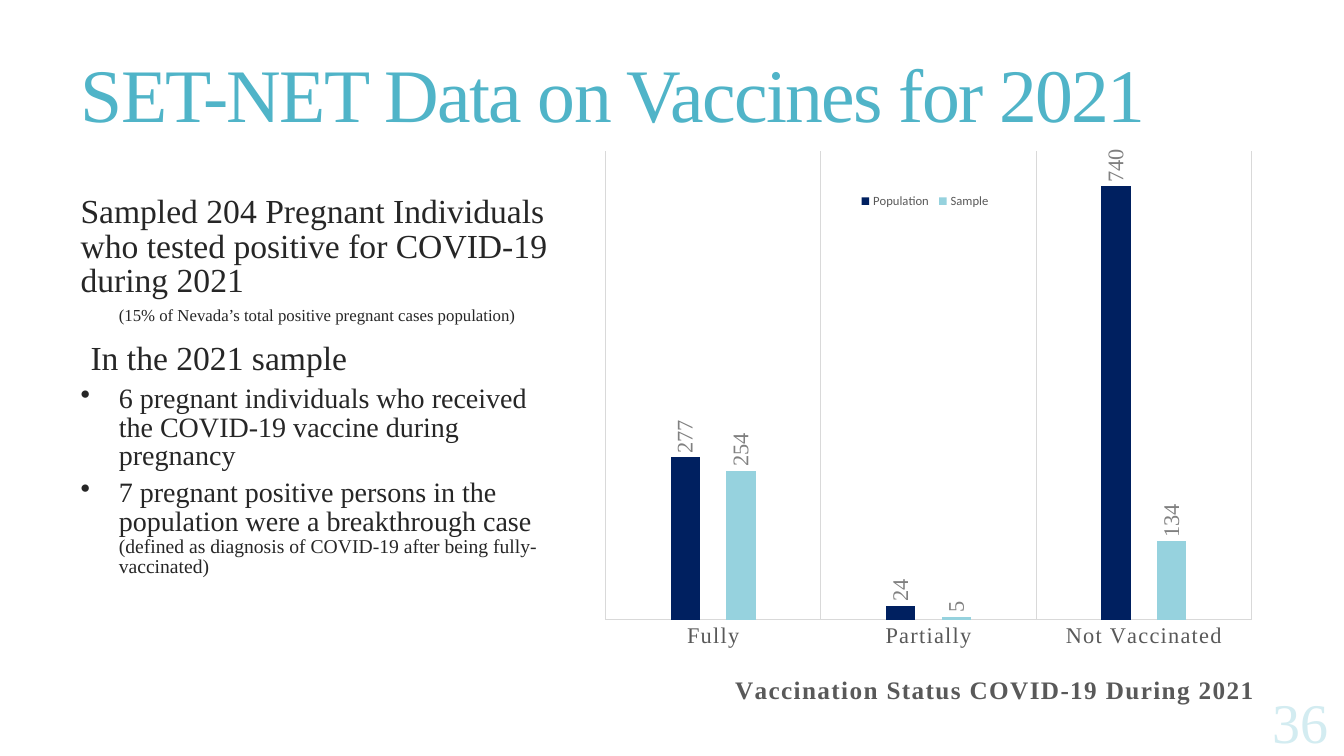
import pptx
import pptx.util
import pptx.dml.color
import pptx.chart.data
import pptx.enum.chart
import pptx.enum.text
import pptx.oxml
import pptx.oxml.ns

SERIF = "Times New Roman"
Pt = pptx.util.Pt
qn = pptx.oxml.ns.qn


def px(n):
    return pptx.util.Emu(n * 9144)


def color(hue):
    return pptx.dml.color.RGBColor.from_string(hue)


def style(font, size, hue, name=SERIF, bold=False):
    font.size = Pt(size)
    font.name = name
    font.bold = bold
    font.color.rgb = color(hue)


def put_title(slide, box):
    title = slide.shapes.title
    title.left, title.top, title.width, title.height = map(px, box)
    frame = title.text_frame
    frame.text = "SET-NET Data on Vaccines for 2021"
    frame.word_wrap = True
    frame.vertical_anchor = pptx.enum.text.MSO_ANCHOR.MIDDLE
    para = frame.paragraphs[0]
    para.alignment = pptx.enum.text.PP_ALIGN.LEFT
    para.line_spacing = 0.85
    style(para.font, 54, "50B4C8")
    para.runs[0].font._element.set("spc", "-120")


def put_body(slide, box):
    frame = slide.shapes.add_textbox(*map(px, box)).text_frame
    frame.word_wrap = True
    rows = [
        (0, 0, "", 0, [("Sampled 204 Pregnant Individuals who tested positive for COVID-19 during 2021", 24)]),
        (38, 0, "", 6, [("(15% of Nevada’s total positive pregnant cases population)", 12)]),
        (10, 0, "", 13, [("In the 2021 sample", 24)]),
        (38, -38, "•", 6, [("6 pregnant individuals who received the COVID-19 vaccine during pregnancy", 20)]),
        (38, -38, "•", 6, [("7 pregnant positive persons in the population were a breakthrough case ", 20),
                           ("(defined as diagnosis of COVID-19 after being fully-vaccinated)", 14)]),
    ]
    for i, (left, hang, mark, gap, parts) in enumerate(rows):
        para = frame.add_paragraph() if i else frame.paragraphs[0]
        props = para._p.get_or_add_pPr()
        props.set("marL", str(px(left)))
        props.set("indent", str(px(hang)))
        if mark:
            bullet = pptx.oxml.parse_xml(
                f'<a:buChar {pptx.oxml.ns.nsdecls("a")} char="{mark}"/>')
            props.append(bullet)
        para.line_spacing = 0.85
        para.space_before = Pt(gap)
        style(para.font, parts[0][1], "262626")
        for text, size in parts:
            run = para.add_run()
            run.text = text
            if size != parts[0][1]:
                run.font.size = Pt(size)


def place(parent, index, **spots):
    for old in parent.findall(qn("c:layout")):
        parent.remove(old)
    modes = "".join(f'<c:{k}Mode val="edge"/>' for k in "xy")
    inner = '<c:layoutTarget val="inner"/>' if index == 0 else ""
    sizes = "".join(f'<c:{k} val="{v}"/>' for k, v in spots.items())
    parent.insert(index, pptx.oxml.parse_xml(
        f'<c:layout {pptx.oxml.ns.nsdecls("c")}><c:manualLayout>'
        f'{inner}{modes}{sizes}</c:manualLayout></c:layout>'))


def put_chart(slide, box):
    enum = pptx.enum.chart
    data = pptx.chart.data.CategoryChartData()
    data.categories = ["Fully", "Partially", "Not Vaccinated"]
    data.add_series("Population", [277, 24, 740])
    data.add_series("Sample", [254, 5, 134])
    chart = slide.shapes.add_chart(
        enum.XL_CHART_TYPE.COLUMN_CLUSTERED, *map(px, box), data).chart
    style(chart.font, 10, "000000", "Calibri")

    plot = chart.plots[0]
    plot.gap_width = 444
    plot.overlap = -90
    plot.vary_by_categories = False
    for series, hue in zip(plot.series, ["002060", "96D2DE"]):
        series.format.fill.solid()
        series.format.fill.fore_color.rgb = color(hue)
        labels = series.data_labels
        labels.show_value = True
        labels.position = enum.XL_LABEL_POSITION.OUTSIDE_END
        style(labels.font, 16, "808080")

    axis = chart.category_axis
    axis.major_tick_mark = enum.XL_TICK_MARK.NONE
    axis.has_major_gridlines = True
    for line in (axis.format.line, axis.major_gridlines.format.line):
        line.color.rgb = color("D9D9D9")
        line.width = Pt(0.75)
    style(axis.tick_labels.font, 16, "595959")
    value = chart.value_axis
    value.minimum_scale, value.maximum_scale = 0, 800
    value.has_major_gridlines = False
    value.visible = False

    chart.has_title = True
    para = chart.chart_title.text_frame.paragraphs[0]
    para.text = "Vaccination Status COVID-19 During 2021"
    style(para.font, 18, "595959", bold=True)
    chart.has_legend = True
    chart.legend.position = enum.XL_LEGEND_POSITION.TOP
    chart.legend.include_in_layout = False
    style(chart.legend.font, 9, "595959", "Calibri")

    root = chart.element
    for body in root.xpath(".//c:dLbls/c:txPr/a:bodyPr"):
        body.set("rot", "-5400000")
        body.set("vert", "horz")
    for props in root.xpath(".//c:catAx//a:defRPr | .//c:title//a:defRPr"):
        props.set("spc", "100")
    place(root.xpath(".//c:plotArea")[0], 0, x=0.04, y=0.05, w=0.93, h=0.75)
    place(root.xpath("./c:chart/c:title")[0], 1, x=0.22, y=0.88)
    place(root.xpath(".//c:legend")[0], 1, x=0.4, y=0.11, w=0.2, h=0.04)


def put_page(slide, box):
    frame = slide.shapes.add_textbox(*map(px, box)).text_frame
    frame.margin_left = frame.margin_right = 0
    frame.margin_top = frame.margin_bottom = 0
    frame.word_wrap = True
    frame.vertical_anchor = pptx.enum.text.MSO_ANCHOR.MIDDLE
    para = frame.paragraphs[0]
    para.text = "36"
    para.alignment = pptx.enum.text.PP_ALIGN.RIGHT
    style(para.font, 40, "D3ECF1")


def main():
    deck = pptx.Presentation()
    deck.slide_width, deck.slide_height = px(1333), px(750)
    slide = deck.slides.add_slide(deck.slide_layouts[5])
    put_title(slide, (70, 26, 1192, 145))
    put_body(slide, (70, 190, 489, 478))
    put_chart(slide, (573, 119, 689, 620))
    put_page(slide, (1218, 684, 100, 62))
    deck.save("out.pptx")


if __name__ == "__main__":
    main()
